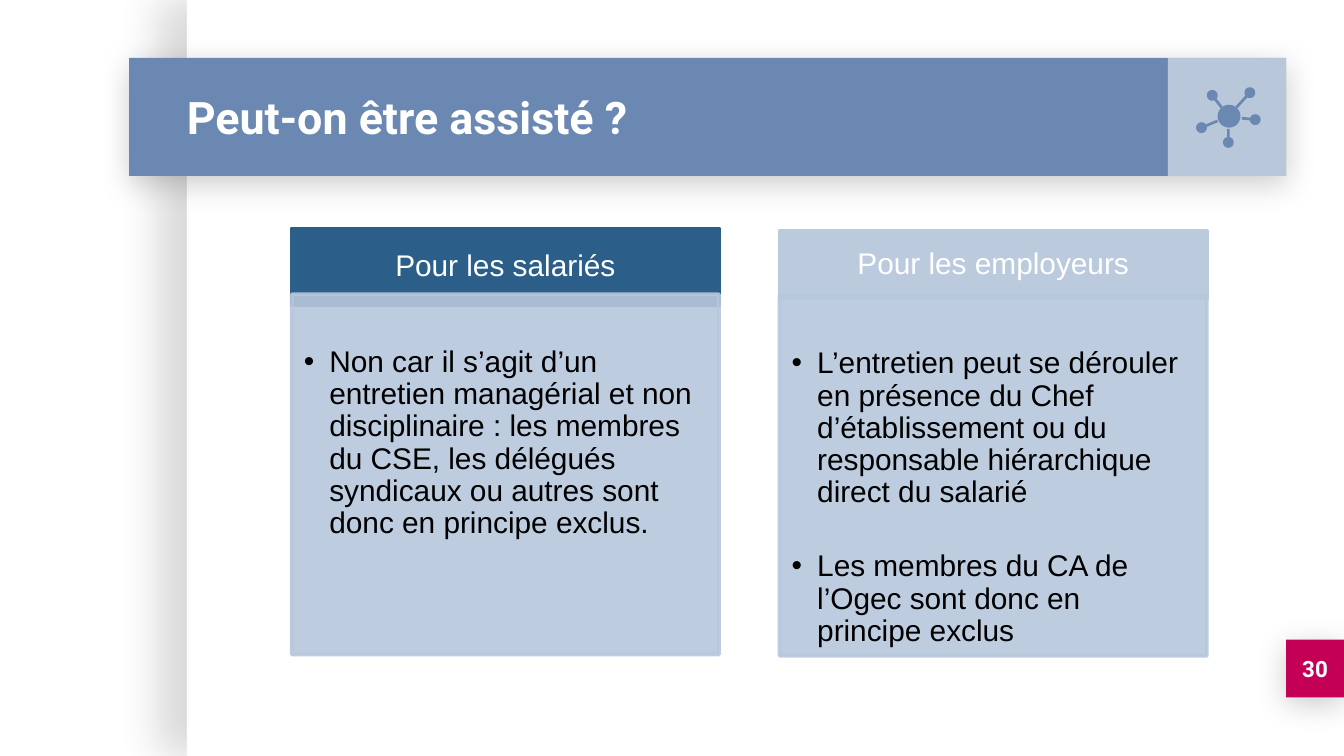
"""Build the slide on who may be assisted during the interview."""
import math

import pptx
import pptx.dml.color
import pptx.enum.shapes
import pptx.enum.text
import pptx.oxml.ns
import pptx.util
from lxml import etree
from pptx.util import Inches

qn = pptx.oxml.ns.qn
SHAPE = pptx.enum.shapes.MSO_SHAPE
ANCHOR = pptx.enum.text.MSO_ANCHOR
ALIGN = pptx.enum.text.PP_ALIGN
BLUE, PALE, WHITE = "6A88B2", "B7C7DD", "FFFFFF"


def paint(fill, color, opacity=100):
    fill.solid()
    fill.fore_color.rgb = pptx.dml.color.RGBColor.from_string(color)
    if opacity < 100:
        srgb = fill._xPr.find(".//" + qn("a:srgbClr"))
        etree.SubElement(srgb, qn("a:alpha"), val=str(opacity * 1000))


def add_box(left, top, width, height, color, opacity=100, outlined=False, shadow=None):
    box = slide.shapes.add_shape(
        SHAPE.RECTANGLE, Inches(left), Inches(top), Inches(width), Inches(height))
    paint(box.fill, color, opacity)
    if outlined:
        paint(box.line.fill, color, opacity)
        box.line.width = pptx.util.Pt(2)
    else:
        box.line.fill.background()
    box.shadow.inherit = False
    if shadow:
        strength, blur, distance, angle = shadow
        effects = box._element.spPr.find(qn("a:effectLst"))
        outer = etree.SubElement(
            effects, qn("a:outerShdw"), blurRad=str(pptx.util.Pt(blur)),
            dist=str(pptx.util.Pt(distance)), dir=str(angle * 60000),
            algn="ctr", rotWithShape="0")
        tint = etree.SubElement(outer, qn("a:srgbClr"), val="000000")
        etree.SubElement(tint, qn("a:alpha"), val=str(strength * 1000))
    box.text_frame.word_wrap = True
    return box


deck = pptx.Presentation()
deck.slide_width, deck.slide_height = Inches(10), Inches(10 * 9 / 16)
slide = deck.slides.add_slide(deck.slide_layouts[6])

drop = (20, 16.9, 3.8, 90)
add_box(1.39, 0, 8.61, 10 * 9 / 16, WHITE, shadow=(15, 22.5, 15, 180))
page_tag = add_box(9.57, 4.76, 0.43, 0.43, "C40056", shadow=drop)
banner = add_box(0.96, 0.43, 8.61, 0.88, BLUE, shadow=drop)
add_box(8.69, 0.43, 0.88, 0.88, WHITE, 53)

for holder, wording, size, align, inset in (
    (banner, "Peut-on être assisté ?", 24, ALIGN.LEFT, 0.43),
    (page_tag, "30", 12, ALIGN.CENTER, 0.1),
):
    frame = holder.text_frame
    frame.vertical_anchor = ANCHOR.MIDDLE
    frame.margin_left, frame.margin_right = Inches(inset), Inches(0.1)
    line = frame.paragraphs[0]
    line.text = wording
    line.alignment = align
    line.font.name, line.font.size, line.font.bold = "Roboto", pptx.util.Pt(size), True
    paint(line.font.fill, WHITE)

node_radius, half_bar, hub_size = 0.04, 0.01, 0.17
spokes = (
    ((9.3, 0.69), (9.2, 0.8)),
    ((9.02, 0.71), (9.09, 0.8)),
    ((8.94, 0.95), (9.06, 0.9)),
    ((9.14, 1.06), (9.14, 0.96)),
    ((9.34, 0.89), (9.24, 0.88)),
)
icon_parts = []
for (node_x, node_y), (tip_x, tip_y) in spokes:
    heading = math.atan2(tip_y - node_y, tip_x - node_x)
    opening = math.asin(half_bar / node_radius)
    steps = 24
    outline = []
    for step in range(steps + 1):
        angle = heading + opening + step * (2 * math.pi - 2 * opening) / steps
        outline.append((Inches(node_x + node_radius * math.cos(angle)),
                        Inches(node_y + node_radius * math.sin(angle))))
    for side in (-1, 1):
        outline.append((Inches(tip_x - side * half_bar * math.sin(heading)),
                        Inches(tip_y + side * half_bar * math.cos(heading))))
    builder = slide.shapes.build_freeform(*outline[0])
    builder.add_line_segments(outline[1:], close=True)
    icon_parts.append(builder.convert_to_shape())
icon_parts.append(slide.shapes.add_shape(
    SHAPE.OVAL, Inches(9.06), Inches(0.78), Inches(hub_size), Inches(hub_size)))
for part in icon_parts:
    paint(part.fill, BLUE)
    part.line.fill.background()
    part.shadow.inherit = False

columns = (
    (2.17, 1.7, 0.57, 2.19, "2B5F8A", "Pour les salariés", (
        "Non car il s’agit d’un entretien managérial et non disciplinaire : les membres "
        "du CSE, les délégués syndicaux ou autres sont donc en principe exclus.",)),
    (5.8, 1.72, 0.5, 2.2, "BBCADD", "Pour les employeurs", (
        "L’entretien peut se dérouler en présence du Chef d’établissement ou du "
        "responsable hiérarchique direct du salarié",
        "Les membres du CA de l’Ogec sont donc en principe exclus")),
)
for left, top, height, body_top, color, heading, answers in columns:
    header = add_box(left, top, 3.18, height, color, outlined=True)
    body = add_box(left, body_top, 3.18, 2.68, PALE, 90, outlined=True)

    frame = header.text_frame
    frame.vertical_anchor = ANCHOR.MIDDLE
    frame.margin_left = frame.margin_right = Inches(0.12)
    frame.margin_top = frame.margin_bottom = Inches(0.07)
    title = frame.paragraphs[0]
    title.text = heading
    title.alignment = ALIGN.CENTER
    title.line_spacing = 0.9
    title.font.name, title.font.size = "Arial", pptx.util.Pt(16)
    paint(title.font.fill, WHITE)

    frame = body.text_frame
    frame.vertical_anchor = ANCHOR.TOP
    frame.margin_left, frame.margin_right = Inches(0.09), Inches(0.12)
    frame.margin_top, frame.margin_bottom = Inches(0.39), Inches(0.05)
    for index, answer in enumerate(answers):
        item = frame.paragraphs[0] if index == 0 else frame.add_paragraph()
        item.text = answer
        item.alignment = ALIGN.LEFT
        item.line_spacing = 0.9
        if index:
            item.space_before = pptx.util.Pt(22.4)
        properties = item._p.get_or_add_pPr()
        properties.set("marL", str(Inches(0.19)))
        properties.set("indent", str(-Inches(0.19)))
        etree.SubElement(properties, qn("a:buFont"), typeface="Arial")
        etree.SubElement(properties, qn("a:buChar"), char="•")
        item.font.name, item.font.size = "Arial", pptx.util.Pt(16)
        paint(item.font.fill, "000000")

deck.save("out.pptx")
